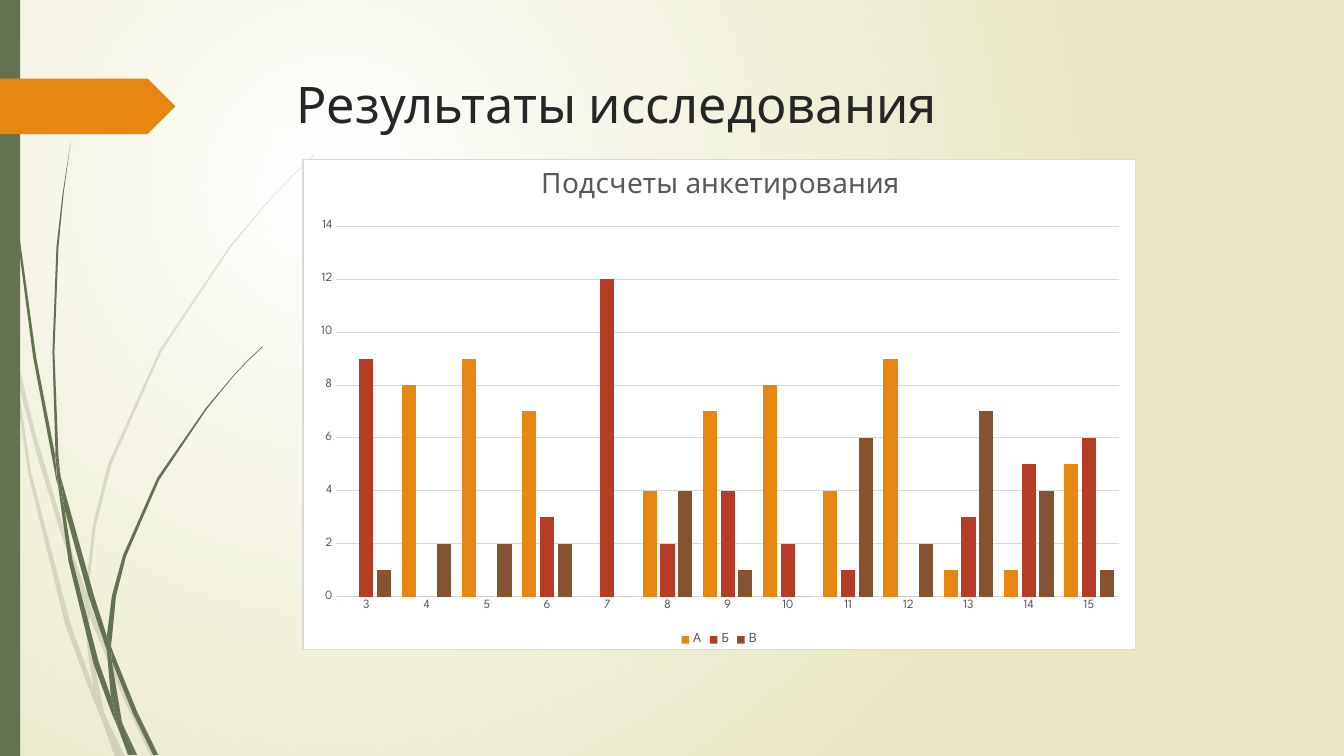
from dataclasses import dataclass

from lxml import etree
from pptx import Presentation
from pptx.chart.data import CategoryChartData
from pptx.dml.color import RGBColor
from pptx.enum.chart import XL_CHART_TYPE, XL_LEGEND_POSITION, XL_TICK_MARK
from pptx.enum.shapes import MSO_SHAPE
from pptx.enum.text import MSO_ANCHOR, MSO_AUTO_SIZE, PP_ALIGN
from pptx.oxml import parse_xml
from pptx.oxml.ns import nsdecls, qn
from pptx.util import Inches, Pt

COLUMNS = XL_CHART_TYPE.COLUMN_CLUSTERED
LEGEND_BOTTOM = XL_LEGEND_POSITION.BOTTOM
NO_TICK = XL_TICK_MARK.NONE
RECTANGLE = MSO_SHAPE.RECTANGLE
ARROW_TAG = MSO_SHAPE.PENTAGON
ANCHOR_TOP = MSO_ANCHOR.TOP
NO_AUTOFIT = MSO_AUTO_SIZE.NONE
ALIGN_LEFT = PP_ALIGN.LEFT

FONT = "League Spartan"
GREEN = "647252"
ORANGE = "E78712"
GRAY = "595959"
PALE_GRAY = "D9D9D9"

Outline = list[tuple[float, float]]


@dataclass
class Grass:
    opacity: int
    blades: list[Outline]


@dataclass
class Answer:
    name: str
    color: str
    counts: list[int]


PALE_GRASS = Grass(20, [
    [(0.11, 3.5), (0.09, 3.22), (0, 2.82), (0, 2.99), (0.1, 3.44)],
    [(0.58, 5.22), (0.84, 5.99), (0.85, 5.86), (0.62, 5.2), (0.36, 4.33), (0.14, 3.45),
     (0.17, 3.76), (0.36, 4.49)],
    [(0.92, 6.07), (0.88, 5.96), (0.88, 6.1), (1.23, 6.94), (1.5, 7.51), (1.55, 7.51),
     (1.27, 6.92)],
    [(1.19, 7.51), (1.24, 7.51), (1.05, 7.11)],
    [(0.93, 6.83), (0.7, 6.19), (0.31, 4.69), (0.17, 3.76), (0.11, 3.5), (0.28, 4.7),
     (0.65, 6.21), (0.92, 6.93), (1.01, 7.14), (0.99, 7.07)],
    [(0.84, 5.99), (0.87, 6.46), (0.93, 6.83), (0.96, 6.92), (1.05, 7.11), (1.03, 7.06),
     (0.91, 6.46), (0.88, 6.1), (0.88, 6.08)],
    [(0.88, 5.84), (0.95, 5.22), (1.1, 4.62), (1.6, 3.49), (2.29, 2.45), (2.68, 1.98),
     (2.9, 1.75), (3.12, 1.54), (3.12, 1.53), (2.89, 1.75), (2.68, 1.97), (2.28, 2.44),
     (1.58, 3.48), (1.07, 4.61), (0.92, 5.22), (0.85, 5.84), (0.85, 5.86), (0.88, 5.96)],
    [(1.01, 7.14), (1.14, 7.51), (1.19, 7.51)],
    [(0.88, 6.08), (0.88, 6.1), (0.88, 5.96), (0.85, 5.86), (0.84, 5.99)],
    [(0.96, 6.92), (0.93, 6.83), (0.99, 7.07), (1.01, 7.14), (1.19, 7.51), (1.05, 7.11)],
])
DARK_GRASS = Grass(100, [
    [(0.07, 1.1), (0.17, 2.33), (0.33, 3.55), (0.56, 4.77), (0.57, 4.81), (0.55, 4.57),
     (0.55, 4.53), (0.36, 3.55), (0.19, 2.32), (0.08, 1.09), (0.05, 0.48), (0.04, 0),
     (0.03, 0), (0.04, 0.48)],
    [(0.88, 5.92), (1.06, 6.45), (1.06, 6.33), (1.06, 6.31), (0.93, 5.9), (0.6, 4.72),
     (0.64, 5.05)],
    [(1.13, 6.49), (1.1, 6.41), (1.11, 6.56), (1.32, 7.08), (1.52, 7.49), (1.57, 7.49),
     (1.36, 7.06)],
    [(1.1, 6.91), (0.98, 6.57), (0.72, 5.56), (0.64, 5.05), (0.57, 4.77), (0.68, 5.57),
     (0.93, 6.59), (1.11, 7.08), (1.17, 7.22), (1.16, 7.17)],
    [(0.6, 4.72), (0.58, 4.53), (0.54, 3.49), (0.58, 2.45), (0.63, 1.93), (0.7, 1.41),
     (0.62, 1.93), (0.56, 2.45), (0.52, 3.49), (0.55, 4.49)],
    [(1.33, 7.49), (1.36, 7.49), (1.22, 7.19)],
    [(0.57, 4.77), (0.64, 5.05), (0.6, 4.72), (0.55, 4.49), (0.55, 4.53)],
    [(1.11, 6.33), (1.15, 5.92), (1.25, 5.52), (1.58, 4.76), (2.05, 4.06), (2.31, 3.74),
     (2.45, 3.59), (2.61, 3.44), (2.6, 3.44), (2.45, 3.58), (2.31, 3.73), (2.04, 4.05),
     (1.56, 4.74), (1.22, 5.51), (1.11, 5.91), (1.06, 6.31), (1.1, 6.41)],
    [(1.17, 7.22), (1.27, 7.49), (1.31, 7.49)],
    [(1.06, 6.45), (1.1, 6.91), (1.16, 7.06), (1.22, 7.19), (1.21, 7.16), (1.11, 6.56),
     (1.09, 6.51)],
    [(1.06, 6.45), (1.09, 6.51), (1.11, 6.56), (1.1, 6.41), (1.06, 6.31), (1.06, 6.33)],
    [(1.16, 7.06), (1.1, 6.91), (1.16, 7.17), (1.17, 7.22), (1.3, 7.49), (1.33, 7.49),
     (1.22, 7.19)],
])
QUESTIONS = [str(number) for number in range(3, 16)]
ANSWERS = [
    Answer("А", ORANGE, [0, 8, 9, 7, 0, 4, 7, 8, 4, 9, 1, 1, 5]),
    Answer("Б", "B73C26", [9, 0, 0, 3, 12, 2, 4, 2, 1, 0, 3, 5, 6]),
    Answer("В", "865331", [1, 2, 2, 2, 0, 4, 1, 0, 6, 2, 7, 4, 1]),
]


def rgb(color: str) -> RGBColor:
    return RGBColor.from_string(color)


def paint(shape, color: str, opacity: int = 100) -> None:
    shape.shadow.inherit = False
    shape.line.fill.background()
    shape.fill.solid()
    shape.fill.fore_color.rgb = rgb(color)
    if opacity < 100:
        color_element = shape.fill._xPr.find(".//" + qn("a:srgbClr"))
        etree.SubElement(color_element, qn("a:alpha"), val=str(opacity * 1000))


def style_font(font, size: float, color: str) -> None:
    font.name = FONT
    font.size = Pt(size)
    font.bold = False
    font.color.rgb = rgb(color)


def style_line(line) -> None:
    line.color.rgb = rgb(PALE_GRAY)
    line.width = Pt(0.75)


def draw_grass(slide, grass: Grass) -> None:
    for blade in grass.blades:
        start, *rest = [(Inches(x), Inches(y)) for x, y in blade]
        builder = slide.shapes.build_freeform(*start)
        builder.add_line_segments(rest, close=True)
        paint(builder.convert_to_shape(), GREEN, grass.opacity)


def draw_background(slide) -> None:
    fill = slide.background.fill
    fill.gradient()
    for stop, color, position in zip(fill.gradient_stops, ("FFFFFF", "E8E6C4"), (0, 1)):
        stop.color.rgb = rgb(color)
        stop.position = position
    direction = slide.background._cSld.find(".//" + qn("a:lin"))
    direction.getparent().replace(direction, parse_xml(
        f'<a:path {nsdecls("a")} path="circle">'
        '<a:fillToRect l="50000" t="50000" r="100000" b="100000"/></a:path>'))


def draw_title(slide, text: str) -> None:
    title = slide.shapes.title
    title.left, title.top = Inches(2.84), Inches(0.68)
    title.width, title.height = Inches(9.75), Inches(1.4)
    frame = title.text_frame
    frame.word_wrap = True
    frame.auto_size = NO_AUTOFIT
    frame.vertical_anchor = ANCHOR_TOP
    paragraph = frame.paragraphs[0]
    paragraph.alignment = ALIGN_LEFT
    run = paragraph.add_run()
    run.text = text
    style_font(run.font, 36, "262626")


def place_in_chart(element, index: int, **places: float | str) -> None:
    for layout in element.findall(qn("c:layout")):
        element.remove(layout)
    settings = "".join(f'<c:{name} val="{value}"/>' for name, value in places.items())
    element.insert(index, parse_xml(
        f'<c:layout {nsdecls("c")}><c:manualLayout>{settings}</c:manualLayout></c:layout>'))


def draw_chart(slide, title: str) -> None:
    data = CategoryChartData()
    data.categories = QUESTIONS
    for answer in ANSWERS:
        data.add_series(answer.name, answer.counts)
    chart = slide.shapes.add_chart(
        COLUMNS, Inches(3), Inches(1.58), Inches(8.27), Inches(4.87), data).chart
    style_font(chart.font, 10, "000000")
    chart.has_title = True
    run = chart.chart_title.text_frame.paragraphs[0].add_run()
    run.text = title
    style_font(run.font, 20, GRAY)
    chart.chart_title.include_in_layout = False
    chart.has_legend = True
    chart.legend.position = LEGEND_BOTTOM
    chart.legend.include_in_layout = False
    style_font(chart.legend.font, 9, GRAY)
    plot = chart.plots[0]
    plot.vary_by_categories = False
    plot.gap_width, plot.overlap = 75, -25
    for series, answer in zip(plot.series, ANSWERS):
        series.format.fill.solid()
        series.format.fill.fore_color.rgb = rgb(answer.color)
    for axis in (chart.category_axis, chart.value_axis):
        axis.major_tick_mark = axis.minor_tick_mark = NO_TICK
        style_font(axis.tick_labels.font, 9, GRAY)
    style_line(chart.category_axis.format.line)
    values = chart.value_axis
    values.minimum_scale, values.maximum_scale, values.major_unit = 0, 14, 2
    values.format.line.fill.background()
    style_line(values.major_gridlines.format.line)
    chart_element = chart._chartSpace.find(qn("c:chart"))
    place_in_chart(chart_element.find(qn("c:title")), 1,
                   xMode="edge", yMode="edge", x=0.28, y=0.01)
    place_in_chart(chart_element.find(qn("c:plotArea")), 0, layoutTarget="inner",
                   xMode="edge", yMode="edge", x=0.04, y=0.136, w=0.94, h=0.756)
    chart_element.addnext(parse_xml(
        f'<c:spPr {nsdecls("c", "a")}>'
        '<a:solidFill><a:srgbClr val="FFFFFF"/></a:solidFill>'
        f'<a:ln w="{Pt(0.75)}"><a:solidFill><a:srgbClr val="{PALE_GRAY}"/></a:solidFill></a:ln>'
        '</c:spPr>'))


def main() -> None:
    presentation = Presentation()
    presentation.slide_width, presentation.slide_height = Inches(13.33), Inches(7.5)
    slide = presentation.slides.add_slide(presentation.slide_layouts[5])
    draw_background(slide)
    for grass in (PALE_GRASS, DARK_GRASS):
        draw_grass(slide, grass)
    paint(slide.shapes.add_shape(RECTANGLE, 0, 0, Inches(0.2), Inches(7.5)), GREEN)
    arrow_tag = slide.shapes.add_shape(ARROW_TAG, 0, Inches(0.78), Inches(1.74), Inches(0.55))
    paint(arrow_tag, ORANGE)
    draw_title(slide, "Результаты исследования")
    draw_chart(slide, "Подсчеты анкетирования")
    presentation.save("out.pptx")


if __name__ == "__main__":
    main()
